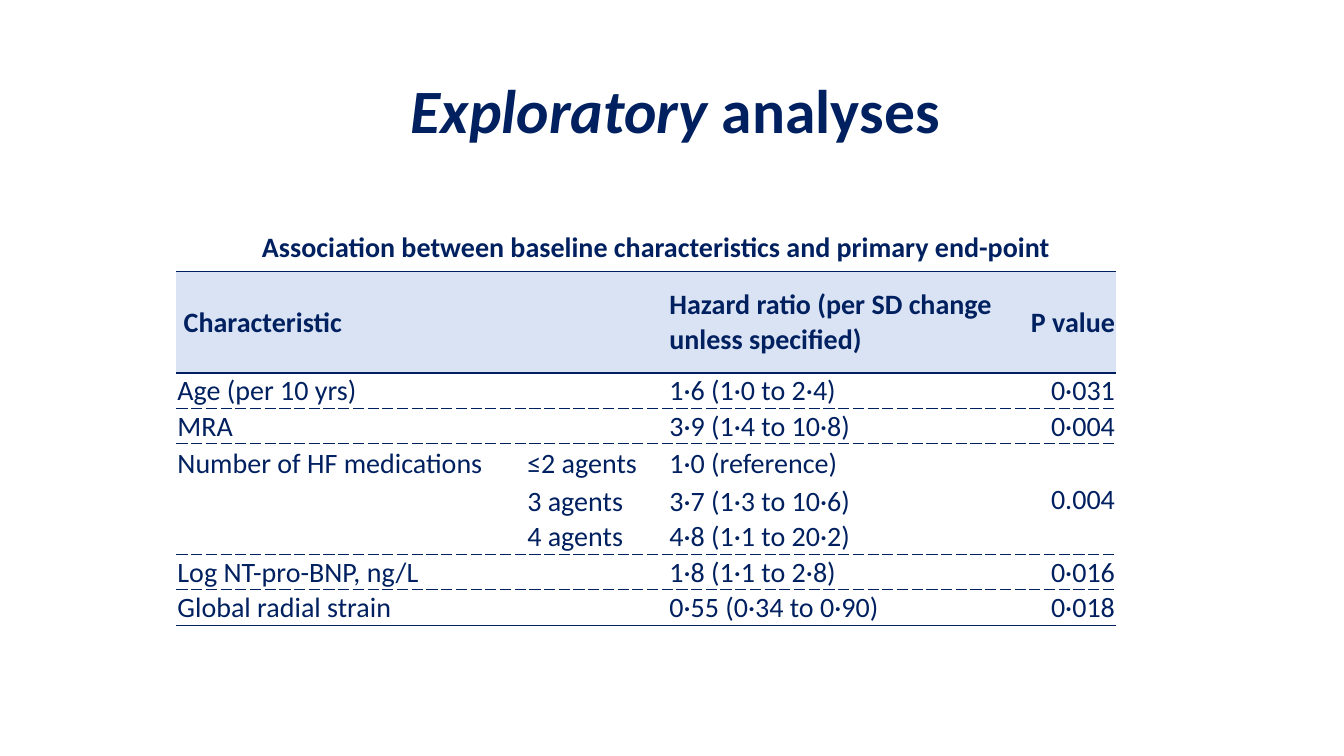
from lxml import etree
from pptx import Presentation
from pptx.dml.color import RGBColor
from pptx.enum.text import MSO_ANCHOR, PP_ALIGN
from pptx.oxml.ns import qn
from pptx.util import Inches, Pt

MIDDLE = MSO_ANCHOR.MIDDLE
LEFT, CENTER, RIGHT = PP_ALIGN.LEFT, PP_ALIGN.CENTER, PP_ALIGN.RIGHT
NAVY = RGBColor(0x00, 0x20, 0x60)
PALE_BLUE = RGBColor(0xDA, 0xE3, 0xF3)
FONT = "Calibri"
TABLE_SIZE = 20
TITLE_ONLY = 5

COLUMN_WIDTHS = [3.47, 1.04, 0.37, 3.37, 1.07]
ROW_HEIGHTS = [1.01, 0.35, 0.35, 0.39, 0.36, 0.34, 0.35, 0.35]
# Horizontal rules, from above the header to below the last row
RULES = ["solid", "solid", "sysDash", "sysDash", None, None,
         "sysDash", "sysDash", "solid"]
ROWS = [
    ["\u00a0Characteristic", "", "", "Hazard ratio (per SD change unless specified)", "P value"],
    ["Age (per 10 yrs)", "", "", "1·6 (1·0 to 2·4)", "0·031"],
    ["MRA", "", "", "3·9 (1·4 to 10·8)", "0·004"],
    ["Number of HF medications", "≤2 agents", "", "1·0 (reference)", "0.004"],
    ["", "3 agents", "", "3·7 (1·3 to 10·6)", ""],
    ["", "4 agents", "", "4·8 (1·1 to 20·2)", ""],
    ["Log NT-pro-BNP, ng/L", "", "", "1·8 (1·1 to 2·8)", "0·016"],
    ["Global radial strain", "", "", "0·55 (0·34 to 0·90)", "0·018"],
]
# First and last cell of each merged block, as (row, column)
MERGES = [((0, 0), (0, 1)), ((1, 0), (1, 1)), ((2, 0), (2, 2)), ((3, 4), (5, 4))]
MERGES += [((row, 1), (row, 2)) for row in range(3, 8)]


def add_run(paragraph, text, size, bold=False, italic=False):
    run = paragraph.add_run()
    run.text = text
    font = run.font
    font.name, font.size = FONT, Pt(size)
    font.bold, font.italic = bold, italic
    font.color.rgb = NAVY


def add_border(cell, side, dash):
    properties = cell._tc.get_or_add_tcPr()
    line = etree.SubElement(properties, qn(f"a:{side}"), w=str(Pt(1)))
    if dash is None:
        etree.SubElement(line, qn("a:noFill"))
        return
    fill = etree.SubElement(line, qn("a:solidFill"))
    etree.SubElement(fill, qn("a:srgbClr"), val=str(NAVY))
    etree.SubElement(line, qn("a:prstDash"), val=dash)


def fill_cell(cell, row, column):
    cell.margin_left = cell.margin_right = cell.margin_top = Inches(0.01)
    cell.margin_bottom = 0
    cell.vertical_anchor = MIDDLE
    borders = {"lnL": None, "lnR": None, "lnT": RULES[row],
               "lnB": RULES[row + cell.span_height]}
    for side, dash in borders.items():
        add_border(cell, side, dash)
    if row == 0:
        cell.fill.solid()
        cell.fill.fore_color.rgb = PALE_BLUE
    else:
        cell.fill.background()

    paragraph = cell.text_frame.paragraphs[0]
    paragraph.alignment = RIGHT if column == len(COLUMN_WIDTHS) - 1 else LEFT
    text = ROWS[row][column]
    if text:
        add_run(paragraph, text, TABLE_SIZE, bold=row == 0)
    else:
        # Keeps empty cells from stretching their row
        etree.SubElement(paragraph._p, qn("a:endParaRPr"), sz=str(TABLE_SIZE * 100))


def add_title(slide, left, top, width, height):
    title = slide.shapes.title
    title.left, title.top, title.width, title.height = left, top, width, height
    title.text_frame.vertical_anchor = MIDDLE
    paragraph = title.text_frame.paragraphs[0]
    paragraph.alignment = CENTER
    paragraph.line_spacing = 0.9
    add_run(paragraph, "Exploratory ", 44, bold=True, italic=True)
    add_run(paragraph, "analyses", 44, bold=True)


def add_caption(slide, left, top, width, height):
    caption = slide.shapes.add_textbox(left, top, width, height)
    caption.text_frame.word_wrap = False
    add_run(caption.text_frame.paragraphs[0],
            "Association between baseline characteristics and primary end-point",
            TABLE_SIZE, bold=True)


def add_hazard_table(slide, left, top):
    table = slide.shapes.add_table(
        len(ROWS), len(COLUMN_WIDTHS), left, top,
        Inches(sum(COLUMN_WIDTHS)), Inches(sum(ROW_HEIGHTS))).table
    table.first_row = table.horz_banding = False
    for column, width in zip(table.columns, COLUMN_WIDTHS):
        column.width = Inches(width)
    for row, height in zip(table.rows, ROW_HEIGHTS):
        row.height = Inches(height)
    for first, last in MERGES:
        table.cell(*first).merge(table.cell(*last))
    for row in range(len(ROWS)):
        for column in range(len(COLUMN_WIDTHS)):
            fill_cell(table.cell(row, column), row, column)


def main():
    presentation = Presentation()
    presentation.slide_width = Inches(13.33)
    presentation.slide_height = Inches(7.5)
    slide = presentation.slides.add_slide(presentation.slide_layouts[TITLE_ONLY])
    add_title(slide, Inches(0.95), Inches(0.4), Inches(11.5), Inches(1.45))
    add_hazard_table(slide, Inches(1.75), Inches(2.69))
    add_caption(slide, Inches(2.5), Inches(2.23), Inches(8.08), Inches(0.44))
    presentation.save("out.pptx")


if __name__ == "__main__":
    main()
